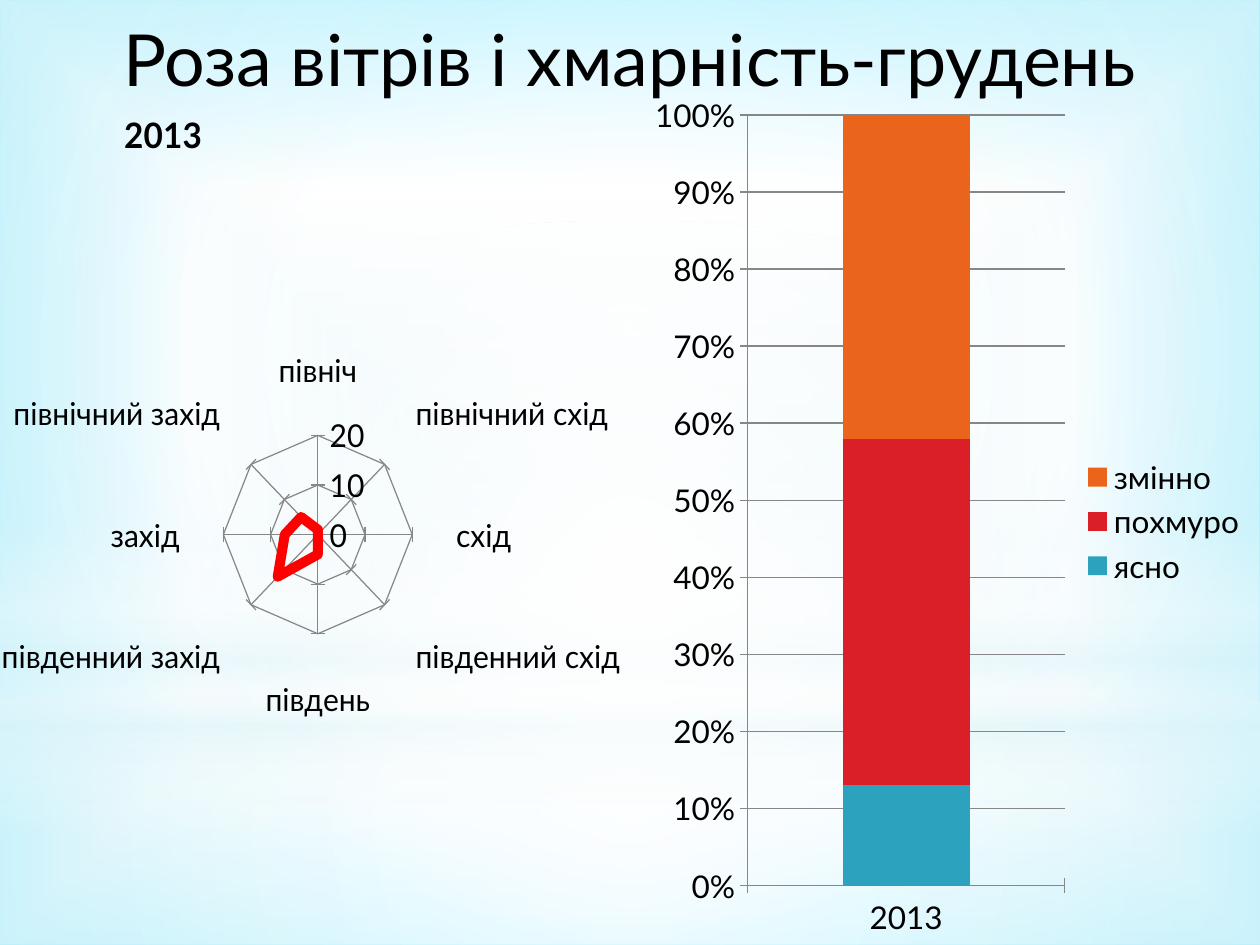
from dataclasses import dataclass

from lxml.etree import SubElement
from pptx import Presentation
from pptx.chart.data import CategoryChartData
from pptx.dml.color import RGBColor
from pptx.enum.chart import XL_CHART_TYPE as ChartType
from pptx.enum.chart import XL_LEGEND_POSITION as LegendPosition
from pptx.enum.chart import XL_TICK_MARK as TickMark
from pptx.enum.shapes import MSO_SHAPE as ShapeType
from pptx.enum.text import MSO_ANCHOR as Anchor
from pptx.enum.text import PP_ALIGN as Align
from pptx.oxml import parse_xml
from pptx.oxml.ns import nsdecls, qn
from pptx.util import Emu, Pt

PX_PER_INCH = 126
FONT = "Lato"
COLORS = {
    "text": "000000", "grid": "878787", "wind": "FF0000",
    "clear": "2DA2BF", "overcast": "DA1F28", "variable": "EB641B",
    "white": "FFFFFF", "mist": "DEF5FA", "haze": "CDEFF7", "sky": "7CE7FF",
}


@dataclass(frozen=True)
class Box:
    left: int
    top: int
    width: int
    height: int

    def emu(self) -> tuple:
        return tuple(px(v) for v in (self.left, self.top, self.width, self.height))


@dataclass(frozen=True)
class Gradient:
    stops: tuple
    kind: str = "circle"


@dataclass(frozen=True)
class Glow:
    box: Box
    gradient: Gradient
    shape_type: ShapeType = ShapeType.RECTANGLE


@dataclass(frozen=True)
class Series:
    name: str
    values: tuple
    color: str


BACKGROUND = Gradient(((0, "haze", 45), (60, "white", 100), (100, "sky", 100)), "shape")
GLOWS = (
    Glow(Box(0, 703, 1260, 242),
         Gradient(((0, "white", 91), (37, "white", 76), (100, "mist", 79)))),
    Glow(Box(0, 0, 1260, 703),
         Gradient(((0, "white", 89), (48, "white", 62), (100, "mist", 79)))),
    Glow(Box(0, 519, 1260, 315),
         Gradient(((0, "white", 0), (29, "white", 30), (45, "mist", 40),
                   (55, "white", 26), (65, "mist", 60), (100, "white", 0)), "linear")),
    Glow(Box(0, 221, 1260, 703),
         Gradient(((0, "white", 100), (56, "white", 0))), ShapeType.OVAL),
)
DIRECTIONS = ("північ", "північний схід", "схід", "південний схід",
              "південь", "південний захід", "захід", "північний захід")
WIND = (Series("2013", (1, 0, 0, 0, 4, 12, 7, 5), "wind"),)
CLOUDS = (
    Series("ясно", (13,), "clear"),
    Series("похмуро", (45,), "overcast"),
    Series("змінно", (42,), "variable"),
)


def px(value: int) -> Emu:
    return Emu(round(value * 914400 / PX_PER_INCH))


def rgb(name: str) -> RGBColor:
    return RGBColor.from_string(COLORS[name])


def gradient_xml(gradient: Gradient):
    stops = "".join(
        f'<a:gs pos="{position * 1000}"><a:srgbClr val="{COLORS[color]}">'
        f'<a:alpha val="{alpha * 1000}"/></a:srgbClr></a:gs>'
        for position, color, alpha in gradient.stops)
    if gradient.kind == "linear":
        direction = '<a:lin ang="5400000" scaled="0"/>'
    else:
        direction = (f'<a:path path="{gradient.kind}"><a:fillToRect '
                     'l="50000" t="50000" r="50000" b="50000"/></a:path>')
    return parse_xml(f'<a:gradFill {nsdecls("a")} rotWithShape="1">'
                     f'<a:gsLst>{stops}</a:gsLst>{direction}</a:gradFill>')


def apply_gradient(fill, parent, gradient: Gradient) -> None:
    fill.gradient()
    parent.replace(parent.find(qn("a:gradFill")), gradient_xml(gradient))


def add_glow(slide, glow: Glow) -> None:
    shape = slide.shapes.add_shape(glow.shape_type, *glow.box.emu())
    shape.shadow.inherit = False
    shape.line.fill.background()
    apply_gradient(shape.fill, shape.fill._xPr, glow.gradient)


def format_font(font, size: int, bold: bool = False, color: str = "text") -> None:
    font.name = FONT
    font.size = Pt(size)
    font.bold = bold
    font.color.rgb = rgb(color)


def add_text(slide, text: str, *, box: Box, size: int, align=Align.CENTER) -> None:
    frame = slide.shapes.add_textbox(*box.emu()).text_frame
    frame.word_wrap = True
    frame.vertical_anchor = Anchor.MIDDLE
    paragraph = frame.paragraphs[0]
    paragraph.alignment = align
    run = paragraph.add_run()
    run.text = text
    format_font(run.font, size)


def set_layout(element, inner: bool = False, **fractions: float) -> None:
    for old in element.findall(qn("c:layout")):
        element.remove(old)
    layout = parse_xml(f'<c:layout {nsdecls("c")}><c:manualLayout/></c:layout>')
    manual = layout[0]
    if inner:
        SubElement(manual, qn("c:layoutTarget")).set("val", "inner")
    for side in ("x", "y"):
        SubElement(manual, qn(f"c:{side}Mode")).set("val", "edge")
    for side, value in fractions.items():
        SubElement(manual, qn(f"c:{side}")).set("val", str(value))
    text = element.find(qn("c:tx"))
    element.insert(0 if text is None else 1, layout)


def add_chart(slide, chart_type, box: Box, categories: tuple, series: tuple):
    data = CategoryChartData()
    data.categories = categories
    for item in series:
        data.add_series(item.name, item.values)
    chart = slide.shapes.add_chart(chart_type, *box.emu(), data).chart
    format_font(chart.font, 18)
    chart.has_legend = False
    chart.has_title = False
    for axis in (chart.category_axis, chart.value_axis):
        axis.major_tick_mark = TickMark.CROSS
        axis.minor_tick_mark = TickMark.NONE
        axis.format.line.color.rgb = rgb("grid")
    chart.value_axis.major_gridlines.format.line.color.rgb = rgb("grid")
    return chart


def add_wind_rose(slide) -> None:
    chart = add_chart(slide, ChartType.RADAR, Box(0, 86, 620, 810), DIRECTIONS, WIND)
    chart.category_axis.major_gridlines.format.line.color.rgb = rgb("grid")
    chart.has_title = True
    title = chart.chart_title
    run = title.text_frame.paragraphs[0].add_run()
    run.text = WIND[0].name
    format_font(run.font, 20, bold=True)
    title.include_in_layout = False
    set_layout(title._element, x=0.2, y=0.02)
    for plotted, item in zip(chart.plots[0].series, WIND):
        plotted.smooth = False
        plotted.format.line.color.rgb = rgb(item.color)
        plotted.format.line.width = Pt(6)


def add_cloud_chart(slide) -> None:
    chart = add_chart(slide, ChartType.COLUMN_STACKED_100, Box(650, 96, 610, 849),
                      ("2013",), CLOUDS)
    plot = chart.plots[0]
    plot.gap_width = 150
    plot.overlap = 100
    plot.vary_by_categories = False
    for plotted, item in zip(plot.series, CLOUDS):
        plotted.format.fill.solid()
        plotted.format.fill.fore_color.rgb = rgb(item.color)
    labels = chart.value_axis.tick_labels
    labels.number_format = "0%"
    labels.number_format_is_linked = False
    chart.has_legend = True
    chart.legend.position = LegendPosition.RIGHT
    chart.legend.include_in_layout = False
    area = chart._chartSpace.find(f'.//{qn("c:plotArea")}')
    set_layout(area, inner=True, x=0.16, y=0.02, w=0.52, h=0.91)


def main() -> None:
    presentation = Presentation()
    presentation.slide_width, presentation.slide_height = px(1260), px(945)
    slide = presentation.slides.add_slide(presentation.slide_layouts[6])
    fill = slide.background.fill
    apply_gradient(fill, fill._xPr, BACKGROUND)
    for glow in GLOWS:
        add_glow(slide, glow)
    add_text(slide, "Роза вітрів і хмарність-грудень", box=Box(0, 0, 1260, 116), size=41)
    add_wind_rose(slide)
    add_cloud_chart(slide)
    presentation.save("out.pptx")


if __name__ == "__main__":
    main()
